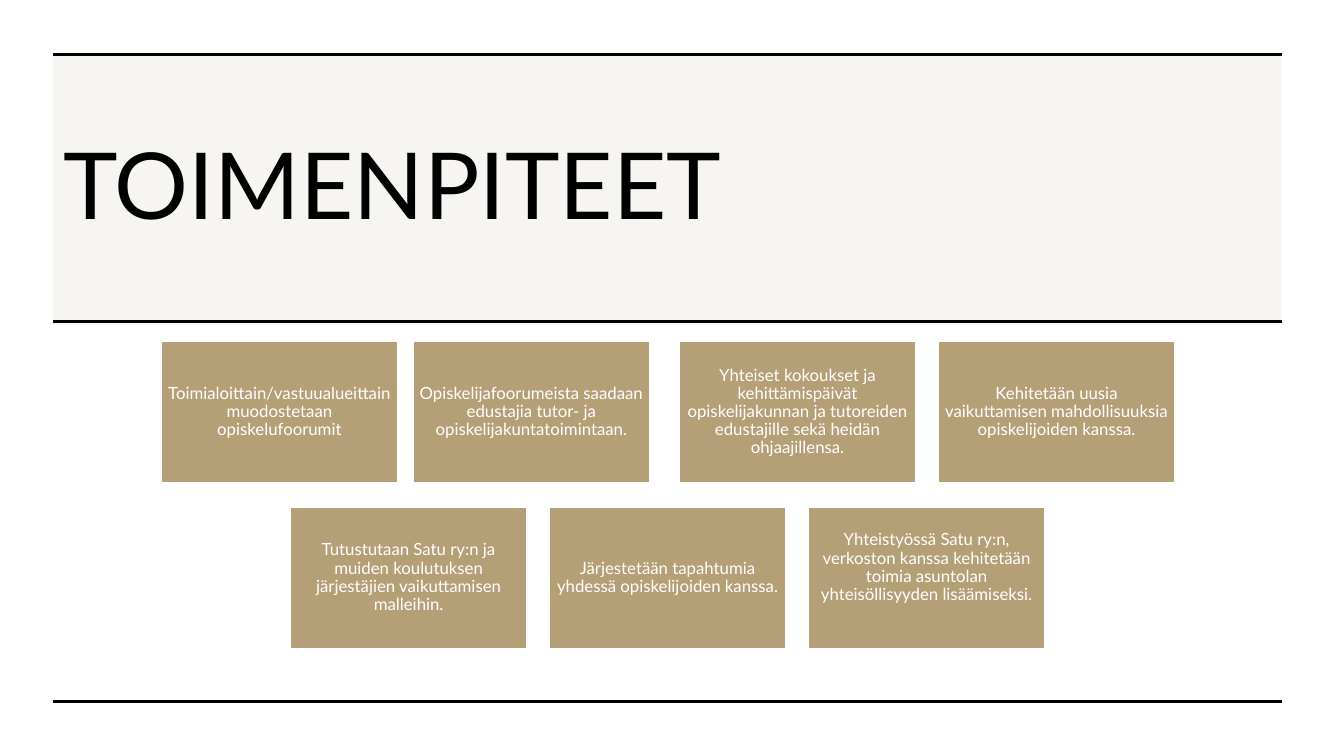
"""Build the slide of planned measures: a title band and two rows of cards."""
from dataclasses import dataclass

from lxml.etree import SubElement
from pptx import Presentation
from pptx.dml.color import RGBColor as RGB
from pptx.enum.shapes import MSO_CONNECTOR as CONN, MSO_SHAPE as SHAPE
from pptx.enum.text import MSO_ANCHOR as ANCHOR, PP_ALIGN as ALIGN
from pptx.oxml.ns import qn
from pptx.shapes.autoshape import Shape
from pptx.slide import Slide
from pptx.text.text import TextFrame
from pptx.util import Pt

COLORS = {"tan": "B49F77", "white": "FFFFFF", "black": "000000"}
FONT = "Lato"
CARD_W, CARD_H, INSET = 168.5, 100.8, 3.6
ROW_TOPS = (244, 362.3)
RULE_LEFT, RULE_RIGHT = 38, 915.8
RULE_TOPS = (38.7, 229.8, 501.3)


@dataclass
class Card:
    """A measure, its place and any space kept free below its text."""
    left: float
    row: int
    text: str
    lift: float = 0


CARDS = [
    Card(115.4, 0, "Toimialoittain/vastuualueittain muodostetaan opiskelufoorumit"),
    Card(295.4, 0, "Opiskelijafoorumeista saadaan edustajia tutor- ja "
                   "opiskelijakuntatoimintaan."),
    Card(485.5, 0, "Yhteiset kokoukset ja kehittämispäivät opiskelijakunnan ja "
                   "tutoreiden edustajille sekä heidän ohjaajillensa."),
    Card(670.5, 0, "Kehitetään uusia vaikuttamisen mahdollisuuksia "
                   "opiskelijoiden kanssa."),
    Card(207.7, 1, "Tutustutaan Satu ry:n ja muiden koulutuksen järjestäjien "
                   "vaikuttamisen malleihin."),
    Card(392.7, 1, "Järjestetään tapahtumia yhdessä opiskelijoiden kanssa."),
    Card(577.7, 1, "Yhteistyössä Satu ry:n, verkoston kanssa kehitetään toimia "
                   "asuntolan yhteisöllisyyden lisäämiseksi.", lift=14.4),
]


def color(name: str) -> RGB:
    """Return the named colour."""
    return RGB.from_string(COLORS[name])


def set_text(tf: TextFrame, text: str, size: float, ink: str, align: ALIGN) -> None:
    """Write one paragraph, centred vertically, and format it."""
    tf.text = text
    tf.word_wrap = True
    tf.vertical_anchor = ANCHOR.MIDDLE
    p = tf.paragraphs[0]
    p.alignment = align
    p.line_spacing = 0.9
    font = p.runs[0].font
    font.name, font.size = FONT, Pt(size)
    font.color.rgb = color(ink)


def add_box(s: Slide, left: float, top: float, width: float, height: float) -> Shape:
    """Add a flat tan rectangle."""
    sp = s.shapes.add_shape(SHAPE.RECTANGLE, Pt(left), Pt(top), Pt(width), Pt(height))
    sp.shadow.inherit = False
    sp.fill.solid()
    sp.fill.fore_color.rgb = color("tan")
    return sp


def add_title(s: Slide) -> None:
    """Place the title over a pale band."""
    title = s.shapes.title
    title.left, title.top, title.width, title.height = Pt(38), Pt(77), Pt(816), Pt(117.4)
    set_text(title.text_frame, "TOIMENPITEET", 66, "black", ALIGN.LEFT)
    band = add_box(s, 37.7, 38.2, 877.7, 193.7)
    band.line.fill.background()
    tint = band.fill._xPr.find(qn("a:solidFill"))[0]
    SubElement(tint, qn("a:alpha"), val="10000")
    title._element.addprevious(band._element)


def add_rule(s: Slide, top: float) -> None:
    """Add a black horizontal rule."""
    rule = s.shapes.add_connector(CONN.STRAIGHT, Pt(RULE_LEFT), Pt(top),
                                  Pt(RULE_RIGHT), Pt(top))
    rule.line.color.rgb = color("black")
    rule.line.width = Pt(2.25)
    SubElement(rule._element.spPr, qn("a:effectLst"))


def add_card(s: Slide, card: Card) -> None:
    """Add a card with its centred text."""
    sp = add_box(s, card.left, ROW_TOPS[card.row], CARD_W, CARD_H)
    sp.line.color.rgb = color("white")
    sp.line.width = Pt(1)
    tf = sp.text_frame
    tf.margin_left = tf.margin_right = tf.margin_top = Pt(INSET)
    tf.margin_bottom = Pt(INSET + card.lift)
    set_text(tf, card.text, 12, "white", ALIGN.CENTER)


def main() -> None:
    """Build and save the slide."""
    prs = Presentation()
    prs.slide_width, prs.slide_height = Pt(960), Pt(540)
    s = prs.slides.add_slide(prs.slide_layouts.get_by_name("Title Only"))
    add_title(s)
    for top in RULE_TOPS:
        add_rule(s, top)
    for card in CARDS:
        add_card(s, card)
    prs.save("out.pptx")


if __name__ == "__main__":
    main()
